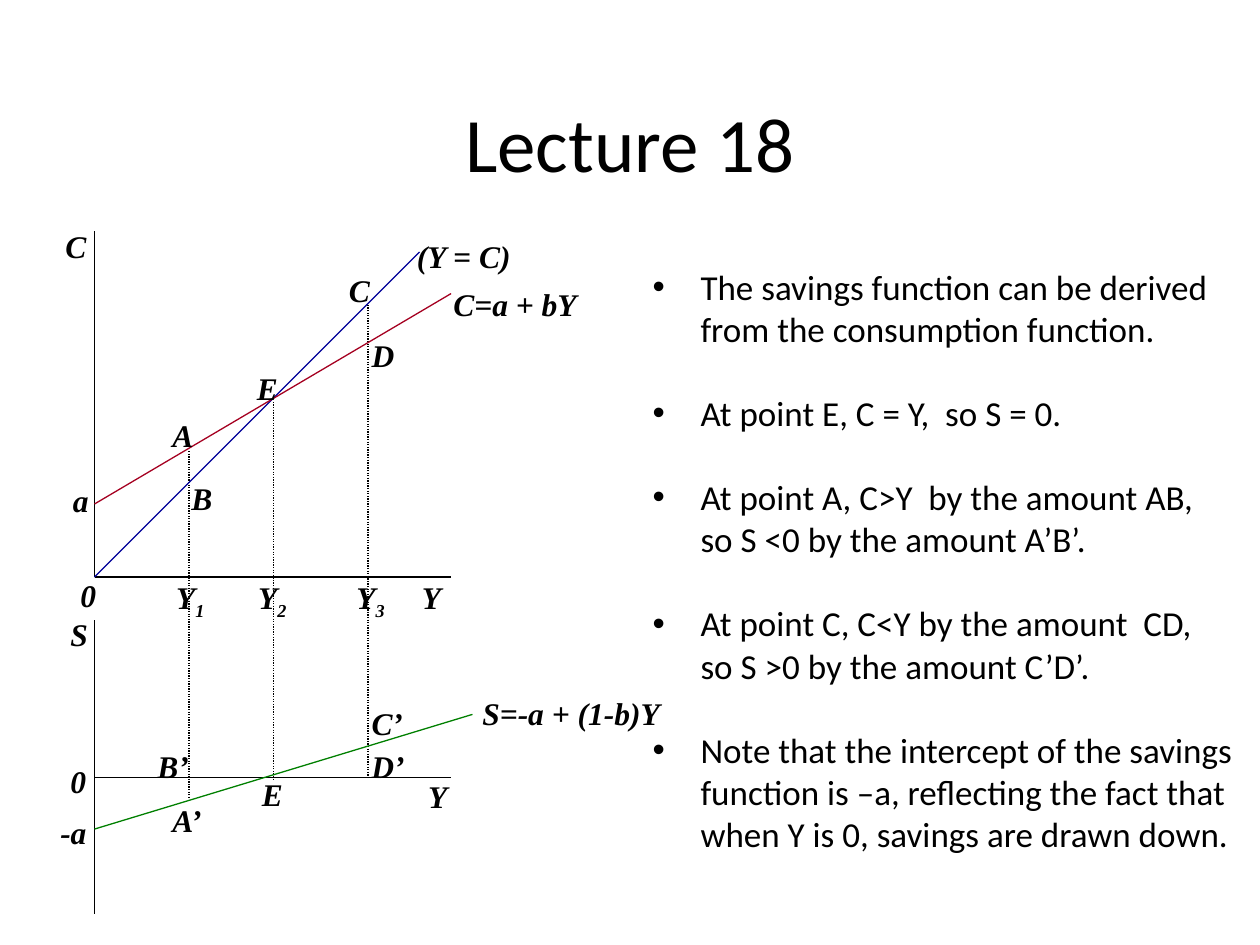
from collections import namedtuple
from dataclasses import dataclass

from lxml import etree
from pptx import Presentation
from pptx import util as u
from pptx.dml.color import RGBColor
from pptx.enum import dml, shapes, text
from pptx.oxml import ns

Box = namedtuple("Box", "x y w h")


@dataclass(frozen=True)
class Theme:
    ink: str = "000000"
    identity: str = "000099"
    consumption: str = "A50021"
    savings: str = "008000"
    sans: str = "Calibri"
    serif: str = "Times New Roman"
    title: int = 44
    body: int = 20
    label: int = 18
    line: float = 0.75


T = Theme()
LABEL_H = 0.4


def place(sp, box):
    sp.left, sp.top, sp.width, sp.height = map(u.Inches, box)


def write(p, content, size=T.label, font=T.serif, bold=False, italic=False, sub=False):
    r = p.add_run()
    r.text = content
    f = r.font
    f.size, f.name, f.bold, f.italic = u.Pt(size), font, bold, italic
    f.color.rgb = RGBColor.from_string(T.ink)
    if sub:
        r._r.get_or_add_rPr().set("baseline", "-25000")


def add_line(s, box, start, end, color=T.ink, dotted=False):
    x1, y1, x2, y2 = map(u.Inches, (box.x + start[0], box.y + start[1],
                                    box.x + end[0], box.y + end[1]))
    c = s.shapes.add_connector(shapes.MSO_CONNECTOR.STRAIGHT, x1, y1, x2, y2)
    c.line.color.rgb = RGBColor.from_string(color)
    c.line.width = u.Pt(T.line)
    if dotted:
        c.line.dash_style = dml.MSO_LINE.ROUND_DOT
    etree.SubElement(c._element.spPr, ns.qn("a:effectLst"))


def label_box(s, box, x, y, w):
    sp = s.shapes.add_textbox(0, 0, 0, 0)
    place(sp, (box.x + x, box.y + y, w, LABEL_H))
    tf = sp.text_frame
    tf.word_wrap = False
    tf.auto_size = text.MSO_AUTO_SIZE.SHAPE_TO_FIT_TEXT
    return tf.paragraphs[0]


def add_labels(s, box, labels):
    for content, x, y, w in labels:
        write(label_box(s, box, x, y, w), content, bold=True, italic=True)


def income_ticks(s, box):
    p = label_box(s, box, 0.55, box.h - 0.04, 2.39)
    tabs = etree.SubElement(p._p.get_or_add_pPr(), ns.qn("a:tabLst"))
    for stop in (0.65, 1.43, 1.95):
        etree.SubElement(tabs, ns.qn("a:tab"), pos=str(u.Inches(stop)), algn="l")
    for name, index in (("Y", "1"), ("\tY", "2"), ("\tY", "3"), ("\tY", "")):
        write(p, name, bold=True, italic=True)
        if index:
            write(p, index, bold=True, italic=True, sub=True)


def guides(s, box):
    for x, top, bottom in ((0.75, 1.75, 4.5), (1.42, 1.36, 4.36), (2.17, 0.59, 4.34)):
        add_line(s, box, (x, top), (x, bottom), dotted=True)


def consumption_chart(s, box):
    add_line(s, box, (0, box.h), (box.w, box.h))
    add_line(s, box, (0, box.h), (0, 0))
    add_line(s, box, (0, box.h), (2.58, 0.17), T.identity)
    add_line(s, box, (0, 2.17), (box.w, 0.5), T.consumption)
    income_ticks(s, box)
    add_labels(s, box, (
        ("C", -0.33, -0.08, 0.37), ("a", -0.27, 1.94, 0.33), ("0", -0.21, 2.69, 0.33),
        ("(Y = C)", 2.46, 0, 0.95), ("C=a + bY", 2.75, 0.38, 1.19),
        ("A", 0.52, 1.42, 0.37), ("B", 0.67, 1.92, 0.37), ("E", 1.19, 1.05, 0.37),
        ("C", 1.92, 0.27, 0.37), ("D", 2.1, 0.79, 0.38)))


def savings_chart(s, box):
    zero = 1.25
    add_line(s, box, (0, zero), (box.w, zero))
    add_line(s, box, (0, box.h), (0, 0))
    add_line(s, box, (0, 1.66), (3, 0.75), T.savings)
    add_labels(s, box, (
        ("S", -0.29, -0.09, 0.34), ("0", -0.29, 1.08, 0.33), ("-a", -0.37, 1.48, 0.41),
        ("Y", 2.55, 1.2, 0.35), ("S=-a + (1-b)Y", 2.98, 0.54, 1.63),
        ("B’", 0.4, 0.96, 0.45), ("A’", 0.52, 1.39, 0.45), ("E", 1.23, 1.18, 0.37),
        ("C’", 2.1, 0.62, 0.45), ("D’", 2.1, 0.96, 0.47)))


def title(s, box):
    sp = s.shapes.title
    place(sp, box)
    tf = sp.text_frame
    tf.vertical_anchor = text.MSO_ANCHOR.MIDDLE
    tf.paragraphs[0].alignment = text.PP_ALIGN.CENTER
    write(tf.paragraphs[0], "Lecture 18", size=T.title, font=T.sans)


def notes_list(s, box):
    points = (
        ("The savings function can be derived", "from the consumption function."),
        ("At point E, C = Y,  so S = 0.",),
        ("At point A, C>Y  by the amount AB,", "so S <0 by the amount A’B’."),
        ("At point C, C<Y by the amount  CD,", "so S >0 by the amount C’D’."),
        ("Note that the intercept of the savings",
         "function is –a, reflecting the fact that",
         "when Y is 0, savings are drawn down."))
    sp = s.placeholders[1]
    place(sp, box)
    tf = sp.text_frame
    tf.word_wrap = True
    tf.auto_size = text.MSO_AUTO_SIZE.NONE
    for i, lines in enumerate(points):
        p = tf.add_paragraph() if i else tf.paragraphs[0]
        pPr = p._p.get_or_add_pPr()
        pPr.set("marL", str(u.Inches(0.38)))
        pPr.set("indent", str(-u.Inches(0.38)))
        etree.SubElement(pPr, ns.qn("a:buChar"), char="•")
        p.space_before = u.Pt(24 if i else 0)
        for j, line in enumerate(lines):
            if j:
                p.add_line_break()
            write(p, line, size=T.body, font=T.sans)


def main():
    prs = Presentation()
    prs.slide_width, prs.slide_height = u.Inches(10), u.Inches(7.5)
    s = prs.slides.add_slide(prs.slide_layouts[1])
    upper = Box(0.75, 1.83, 2.83, 2.75)
    title(s, Box(0.75, 0.5, 8.5, 1.25))
    guides(s, upper)
    consumption_chart(s, upper)
    savings_chart(s, Box(0.75, 4.92, 2.83, 2.33))
    notes_list(s, Box(5.08, 2.06, 4.84, 4.81))
    prs.save("out.pptx")


if __name__ == "__main__":
    main()
